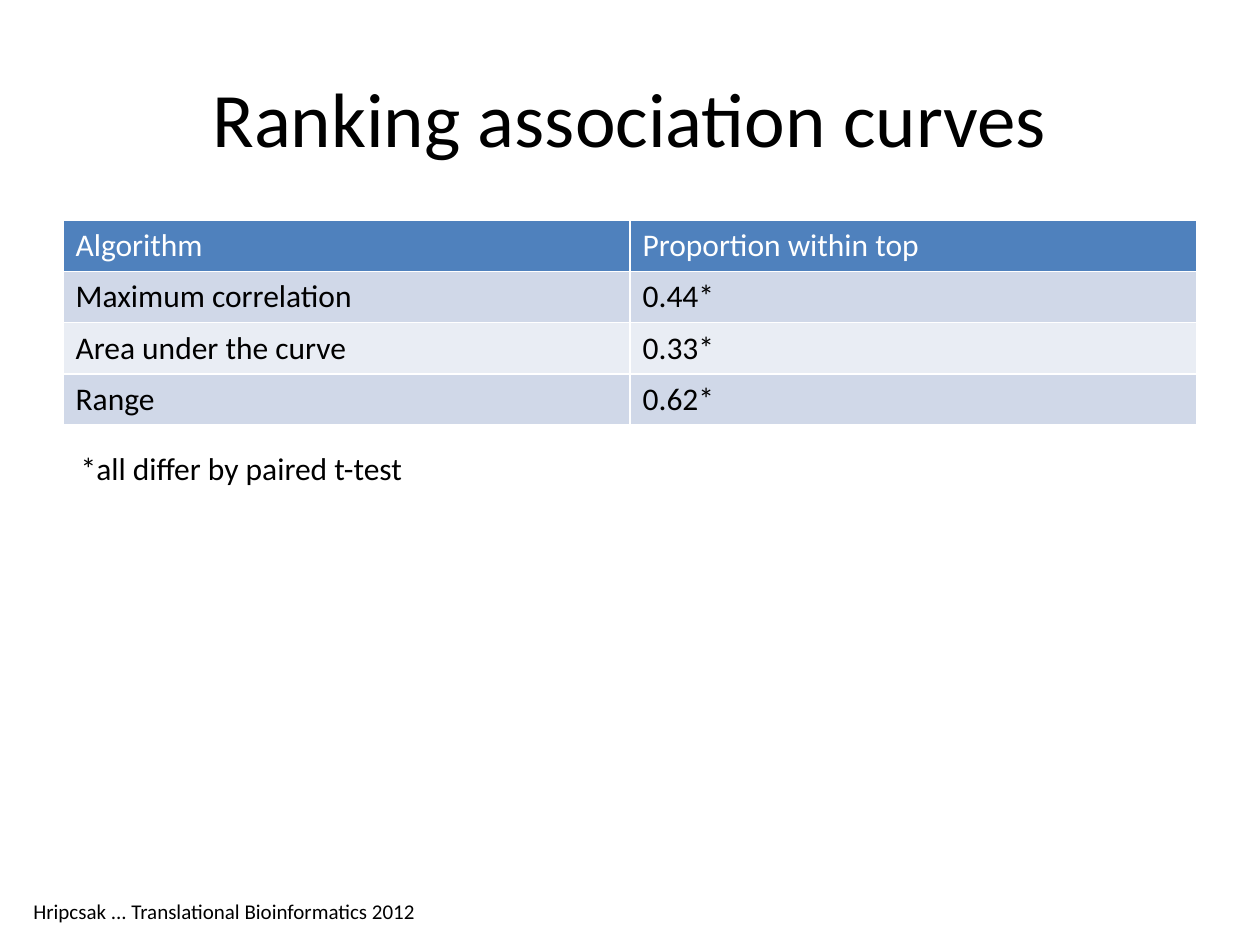
from pptx import Presentation
from pptx.dml.color import RGBColor
from pptx.enum.text import MSO_ANCHOR, PP_ALIGN
from pptx.util import Pt

COLORS = {
    "text": "000000",
    "header_text": "FFFFFF",
    "header": "4F81BD",
    "odd_row": "D0D8E8",
    "even_row": "E9EDF4",
}
ROWS = [
    ("Algorithm", "Proportion within top"),
    ("Maximum correlation", "0.44*"),
    ("Area under the curve", "0.33*"),
    ("Range", "0.62*"),
]


def rgb(name):
    return RGBColor.from_string(COLORS[name])


def write(tf, text, size, color="text", align=PP_ALIGN.LEFT):
    p = tf.paragraphs[0]
    p.alignment = align
    r = p.add_run()
    r.text = text
    font = {"name": "Calibri", "size": Pt(size), "bold": False}
    for key, value in font.items():
        setattr(r.font, key, value)
    r.font.color.rgb = rgb(color)


def place_title(s, box, text):
    sp = s.shapes.title
    for key, value in zip(("left", "top", "width", "height"), box):
        setattr(sp, key, Pt(value))
    sp.text_frame.vertical_anchor = MSO_ANCHOR.MIDDLE
    write(sp.text_frame, text, 44, align=PP_ALIGN.CENTER)


def add_ranking_table(s, box, rows):
    # The default table style supplies the white cell borders
    shape = s.shapes.add_table(len(rows), len(rows[0]), *map(Pt, box))
    for i, row in enumerate(rows):
        if i == 0:
            fill, color = "header", "header_text"
        else:
            fill, color = ("odd_row" if i % 2 else "even_row"), "text"
        for j, text in enumerate(row):
            cell = shape.table.cell(i, j)
            cell.fill.solid()
            cell.fill.fore_color.rgb = rgb(fill)
            write(cell.text_frame, text, 18, color)


def add_note(s, box, text, size):
    tf = s.shapes.add_textbox(*map(Pt, box)).text_frame
    tf.word_wrap = True
    write(tf, text, size)


def main():
    prs = Presentation()
    prs.slide_width, prs.slide_height = Pt(720), Pt(540)
    s = prs.slides.add_slide(prs.slide_layouts[5])

    # Title and table share the same margins
    place_title(s, (36, 21.6, 648, 90), "Ranking association curves")
    add_ranking_table(s, (36, 126, 648, 116.8), ROWS)

    # Footnote and source
    add_note(s, (39, 252.9, 324, 29), "*all differ by paired t-test", 18)
    add_note(s, (12, 510, 390, 21.8),
             "Hripcsak ... Translational Bioinformatics 2012", 12)
    prs.save("out.pptx")


if __name__ == "__main__":
    main()
